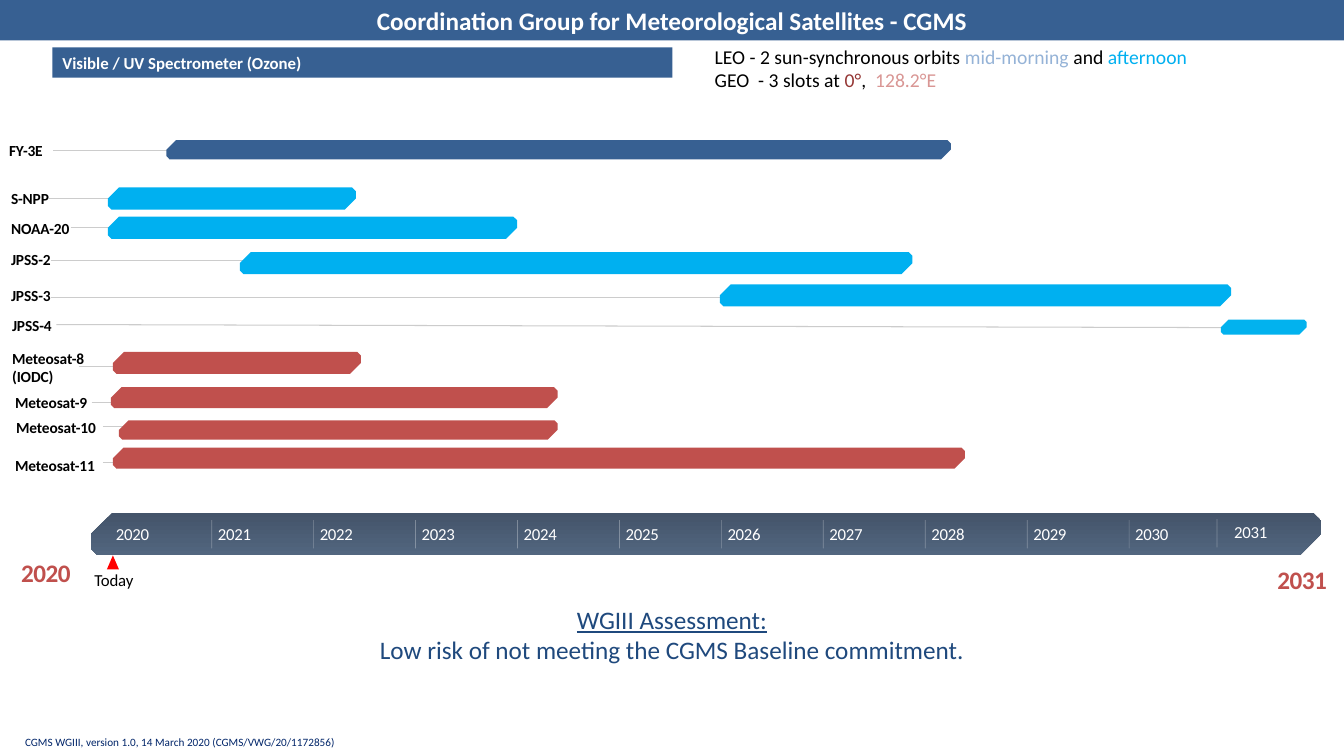
"""Build the satellite timeline slide for the visible / UV spectrometer."""
from lxml import etree
from pptx import Presentation
from pptx.dml.color import RGBColor
from pptx.enum import shapes, text
from pptx.oxml import ns
from pptx.util import Inches, Pt

FONT = "Calibri"
NAVY, SKY, RED, GREY = "376092", "00B0F0", "C0504D", "CCCCCC"
WHITE, BLACK, BLUE = "FFFFFF", "000000", "1F497D"

TITLE = "Coordination Group for Meteorological Satellites - CGMS"
SUBTITLE = "Visible / UV Spectrometer (Ozone)"
FOOTER = "CGMS WGIII, version 1.0, 14 March 2020 (CGMS/VWG/20/1172856)"
ORBITS = [
    [("LEO - 2 sun-synchronous orbits ", BLACK), ("mid-morning ", "95B3D7"),
     ("and ", BLACK), ("afternoon", SKY)],
    [("GEO  - 3 slots at ", BLACK), ("0°", "953735"),
     (",  ", BLACK), ("128.2°E", "D99694")],
]
ASSESSMENT = [
    [("WGIII Assessment:", BLUE)],
    [("Low risk of not meeting the CGMS Baseline commitment.", BLUE)],
]
# name, label box, bar box, leader start and end, colour
SATELLITES = [
    ("FY-3E", (0.09, 1.4, 0.36, 0.19), (1.65, 1.39, 7.78, 0.19), (0.53, 1.49, 1.83, 1.49), NAVY),
    ("S-NPP", (0.11, 1.87, 0.39, 0.19), (1.07, 1.86, 2.46, 0.22), (0.49, 1.97, 1.07, 1.97), SKY),
    ("NOAA-20", (0.11, 2.17, 0.6, 0.19), (1.07, 2.15, 4.06, 0.22), (0.7, 2.26, 1.07, 2.26), SKY),
    ("JPSS-2", (0.11, 2.48, 0.4, 0.19), (2.38, 2.5, 6.67, 0.22), (0.51, 2.58, 2.5, 2.58), SKY),
    ("JPSS-3", (0.11, 2.83, 0.4, 0.19), (7.14, 2.82, 5.07, 0.22), (0.51, 2.95, 7.14, 2.95), SKY),
    ("JPSS-4", (0.12, 3.13, 0.4, 0.19), (12.11, 3.17, 0.85, 0.15), (0.56, 3.22, 12.11, 3.25), "02B2EE"),
    ("Meteosat-8 (IODC)", (0.12, 3.46, 0.91, 0.37), (1.12, 3.49, 2.46, 0.22), (0.78, 3.64, 1.15, 3.64), RED),
    ("Meteosat-9", (0.15, 3.9, 0.91, 0.19), (1.1, 3.84, 4.43, 0.21), (0.91, 3.99, 1.28, 3.99), RED),
    ("Meteosat-10", (0.16, 4.14, 0.91, 0.19), (1.18, 4.17, 4.35, 0.19), (1.02, 4.23, 1.39, 4.23), RED),
    ("Meteosat-11", (0.15, 4.52, 0.91, 0.19), (1.12, 4.44, 8.45, 0.21), (1.02, 4.59, 1.39, 4.59), RED),
]
FIRST_YEAR, LAST_YEAR, YEAR_STEP = 2020, 2031, 1.011
LAST_LABEL, LAST_TICK = (12.24, 5.18), (12.07, 5.15)
END_YEARS = [("2020", (0.21, 5.52, 0.49, 0.31)), ("2031", (12.6, 5.6, 0.63, 0.3))]


def colour(value):
    return RGBColor.from_string(value)


def write(box, paragraphs, size, bold=False, align="LEFT", inset=True, wrap=True, spacing=0):
    frame = box.text_frame
    settings = {"word_wrap": wrap, "vertical_anchor": text.MSO_ANCHOR.MIDDLE,
                "auto_size": text.MSO_AUTO_SIZE.NONE}
    if not inset:
        settings.update(dict.fromkeys(
            ("margin_left", "margin_top", "margin_right", "margin_bottom"), 0))
    for name, value in settings.items():
        setattr(frame, name, value)
    for index, parts in enumerate(paragraphs):
        para = frame.add_paragraph() if index else frame.paragraphs[0]
        para.alignment = getattr(text.PP_ALIGN, align)
        for words, hue in parts:
            span = para.add_run()
            span.text = words
            for name, value in {"name": FONT, "size": Pt(size), "bold": bold}.items():
                setattr(span.font, name, value)
            span.font.color.rgb = colour(hue)
            if spacing:
                span.font._element.set("spc", str(spacing))
    return box


def add_box(page, place):
    return page.shapes.add_textbox(*map(Inches, place))


def add_label(page, words, place, size, hue, **options):
    return write(add_box(page, place), [[(words, hue)]], size, inset=False, **options)


def add_block(page, kind, place, fill):
    block = page.shapes.add_shape(kind, *map(Inches, place))
    block.shadow.inherit = False
    block.line.fill.background()
    block.fill.solid()
    block.fill.fore_color.rgb = colour(fill)
    return block


def add_bar(page, place, fill):
    bar = add_block(page, shapes.MSO_SHAPE.SNIP_2_DIAG_RECTANGLE, place, fill)
    for index, value in enumerate((1, 0.167)):
        bar.adjustments[index] = value
    return bar


def add_line(page, ends, hue, width, opacity=None):
    line = page.shapes.add_connector(shapes.MSO_CONNECTOR.STRAIGHT, *map(Inches, ends))
    line.line.color.rgb = colour(hue)
    line.line.width = Pt(width)
    properties = line._element.spPr
    if opacity:
        tint = properties.find(".//" + ns.qn("a:srgbClr"))
        etree.SubElement(tint, ns.qn("a:alpha"), val=str(opacity * 1000))
    etree.SubElement(properties, ns.qn("a:effectLst"))


def add_heading(page):
    title = page.shapes.title
    places = zip(("left", "top", "width", "height"), (0, 0, 13.33, 0.4))
    for name, value in places:
        setattr(title, name, Inches(value))
    title.fill.solid()
    title.fill.fore_color.rgb = colour(NAVY)
    write(title, [[(TITLE, WHITE)]], 18, bold=True, align="CENTER")
    rectangle = shapes.MSO_SHAPE.RECTANGLE
    banner = add_block(page, rectangle, (0.52, 0.47, 6.15, 0.3), NAVY)
    write(banner, [[(SUBTITLE, WHITE)]], 12, bold=True)
    write(add_box(page, (6.99, 0.39, 4.96, 0.57)), ORBITS, 14)
    verdict = add_block(page, rectangle, (2.5, 5.94, 8.33, 0.71), WHITE)
    write(verdict, ASSESSMENT, 18, align="CENTER")
    verdict.text_frame.paragraphs[0].runs[0].font.underline = True
    write(add_box(page, (0.15, 7.24, 5.26, 0.24)), [[(FOOTER, "002569")]], 8)


def add_timeline(page):
    axis = add_bar(page, (0.9, 5.09, 12.2, 0.42), "44546A")
    axis.fill.gradient()
    axis.fill.gradient_angle = 270
    for stop, hue in zip(axis.fill.gradient_stops, ("44546A", "52667F")):
        stop.color.rgb = colour(hue)
    for index, year in enumerate(range(FIRST_YEAR, LAST_YEAR + 1)):
        last = year == LAST_YEAR
        left, top = LAST_LABEL if last else (1.15 + YEAR_STEP * index, 5.2)
        add_label(page, str(year), (left, top, 0.33, 0.2), 12, WHITE, wrap=False, spacing=-20)
        if index:
            x, y = LAST_TICK if last else (2.1 + YEAR_STEP * (index - 1), 5.16)
            add_line(page, (x, y, x, y + 0.28), WHITE, 0.5, opacity=30)
    for words, place in END_YEARS:
        add_label(page, words, place, 18, RED, bold=True, align="CENTER", wrap=False, spacing=-40)
    add_block(page, shapes.MSO_SHAPE.ISOSCELES_TRIANGLE, (1.06, 5.51, 0.12, 0.14), "FF0000")
    add_label(page, "Today", (0.93, 5.65, 0.4, 0.2), 12, BLACK,
              align="CENTER", wrap=False, spacing=-10)


def add_satellites(page):
    for name, label, bar, leader, hue in SATELLITES:
        add_line(page, leader, GREY, 0.75)
        add_bar(page, bar, hue)
        add_label(page, name, label, 11, BLACK, bold=True, wrap=" " in name, spacing=-10)


def main():
    deck = Presentation()
    deck.slide_width, deck.slide_height = Inches(13.33), Inches(7.5)
    page = deck.slides.add_slide(deck.slide_layouts[5])
    add_heading(page)
    add_timeline(page)
    add_satellites(page)
    deck.save("out.pptx")


if __name__ == "__main__":
    main()
